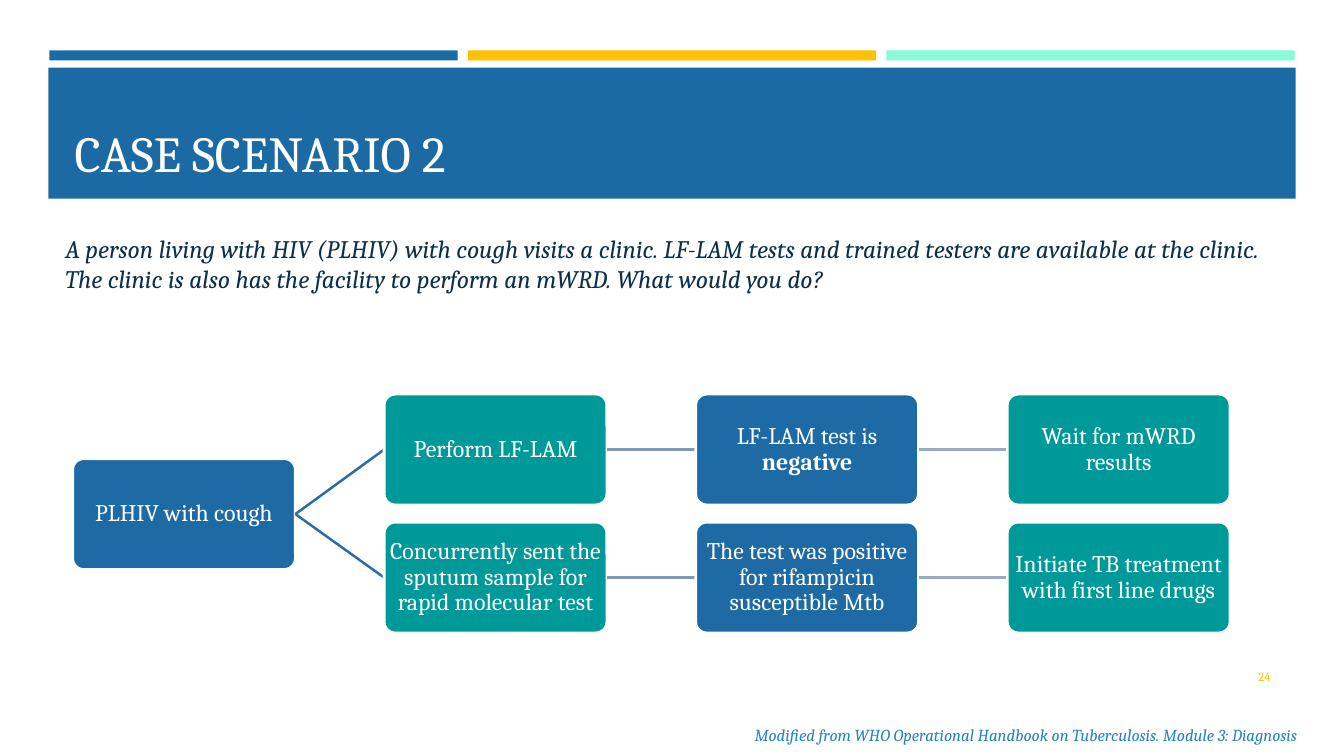
from pptx import Presentation
from pptx import util as u
from pptx.dml.color import RGBColor
from pptx.enum import shapes, text
from pptx.oxml.ns import qn
from lxml import etree

PX = 9144
BLUE, TEAL, GOLD, MINT, WHITE = "1D6AA4", "009999", "FFC000", "88FCD5", "FFFFFF"
BAND = "1C6AA3"
LEFT, MID, RIGHT = text.PP_ALIGN.LEFT, text.PP_ALIGN.CENTER, text.PP_ALIGN.RIGHT


def paint(part, color):
    if hasattr(part, "solid"):
        part.solid()
        part.fore_color.rgb = RGBColor.from_string(color)
    else:
        part.rgb = RGBColor.from_string(color)


def write(shape, words, size, color, align, anchor, italic=False):
    frame = shape.text_frame
    frame.word_wrap = True
    frame.vertical_anchor = anchor
    para = frame.paragraphs[0]
    para.alignment = align
    for i, part in enumerate(words.split("*")):
        if part:
            run = para.add_run()
            run.text = part
            if i % 2:
                run.font.bold = True
    para.font.name = "Cambria"
    para.font.size = u.Pt(size)
    para.font.italic = italic
    paint(para.font.color, color)
    return frame


deck = Presentation()
deck.slide_width, deck.slide_height = 1333 * PX, 750 * PX
slide = deck.slides.add_slide(deck.slide_layouts[5])
draw = slide.shapes

bars = [(49 + 415 * i, 50, 405, 10, c) for i, c in enumerate([BAND, GOLD, MINT])]
for x, y, w, h, color in bars + [(48, 67, 1237, 130, BAND)]:
    bar = draw.add_shape(shapes.MSO_SHAPE.RECTANGLE, x * PX, y * PX, w * PX, h * PX)
    bar.shadow.inherit = False
    paint(bar.fill, color)
    bar.line.fill.background()

title = draw.title
title.left, title.top, title.width, title.height = 64 * PX, 75 * PX, 1190 * PX, 111 * PX
write(title, "CASE SCENARIO 2", 36, WHITE, LEFT, text.MSO_ANCHOR.BOTTOM)
draw._spTree.append(title._element)

notes = [
    (55, 209, 1206, 104, "A person living with HIV (PLHIV) with cough visits a clinic. LF-LAM tests and "
     "trained testers are available at the clinic. The clinic is also has the facility to perform an mWRD. "
     "What would you do?", 18, "0D304A", LEFT, True),
    (1155, 651, 115, 40, "24", 9, GOLD, RIGHT, False),
    (697, 714, 600, 30, "Modified from WHO Operational Handbook on Tuberculosis. Module 3: Diagnosis",
     12, "2382C8", RIGHT, True),
]
for x, y, w, h, words, size, color, align, italic in notes:
    note = draw.add_textbox(x * PX, y * PX, w * PX, h * PX)
    write(note, words, size, color, align, text.MSO_ANCHOR.MIDDLE, italic)

steps = [
    (0, 455, "PLHIV with cough", None),
    (1, 391, "Perform LF-LAM", 0),
    (2, 391, "LF-LAM test is *negative*", 1),
    (3, 391, "Wait for mWRD results", 2),
    (1, 518, "Concurrently sent the sputum sample for rapid molecular test", 0),
    (2, 518, "The test was positive for rifampicin susceptible Mtb", 4),
    (3, 518, "Initiate TB treatment with first line drugs", 5),
]
links = [None, "2A6DA4", "8098BA", "98AAC5"]
boxes = []
for col, y, words, source in steps:
    if source is not None:
        link = draw.add_connector(shapes.MSO_CONNECTOR.STRAIGHT, 0, 0, 0, 0)
        etree.SubElement(link._element.spPr, qn("a:effectLst"))
        paint(link.line.fill, links[col])
        link.line.width = u.Pt(1.75)
    box = draw.add_shape(shapes.MSO_SHAPE.ROUNDED_RECTANGLE,
                         (72 + 309 * col) * PX, y * PX, 221 * PX, 110 * PX)
    box.adjustments[0] = 0.1
    box.shadow.inherit = False
    paint(box.fill, TEAL if col % 2 else BLUE)
    paint(box.line.fill, WHITE)
    box.line.width = u.Pt(2)
    frame = write(box, words, 17, WHITE, MID, text.MSO_ANCHOR.MIDDLE)
    frame.margin_left = frame.margin_right = frame.margin_top = frame.margin_bottom = PX
    frame.paragraphs[0].line_spacing = 0.9
    boxes.append(box)
    if source is not None:
        link.begin_connect(boxes[source], 3)
        link.end_connect(box, 1)

deck.save("out.pptx")
